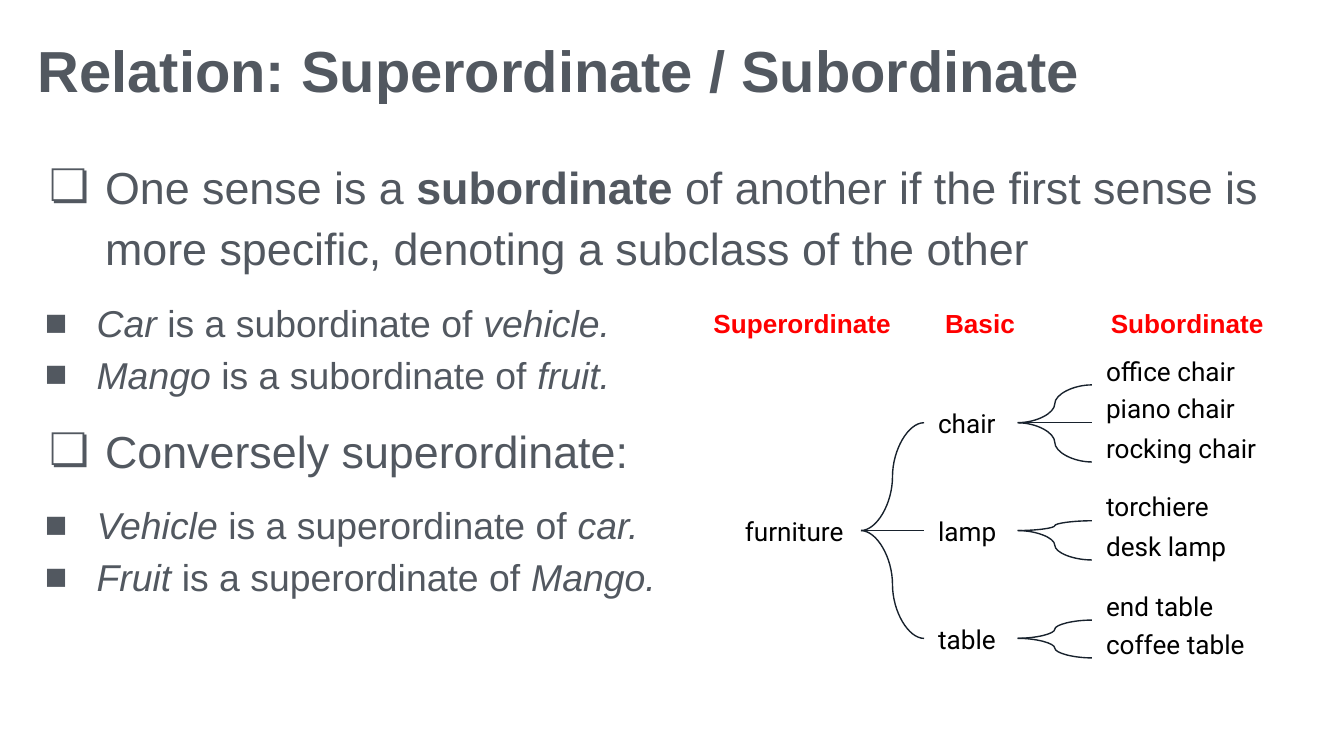
from dataclasses import dataclass
from typing import NamedTuple

from lxml import etree
from pptx import Presentation
from pptx import util as u
from pptx.dml.color import RGBColor
from pptx.enum import shapes, text
from pptx.oxml.ns import qn

EMU_PER_PX = 9525
SLATE, RED, BLACK, INK = "525860", "FF0000", "000000", "18222D"


class Words(NamedTuple):
    text: str
    bold: bool = False
    italic: bool = False


@dataclass
class Point:
    words: list[Words]
    level: int = 0
    before: int = 0


class BulletStyle(NamedTuple):
    char: str
    size: int
    margin: int
    hang: int


@dataclass
class Category:
    label: str
    top: int
    members: dict[str, int]  # label -> top


BULLETS = [BulletStyle("❏", 24, 48, 40), BulletStyle("■", 20, 42, 37)]


def example(first: str, relation: str, last: str, before: int = 0) -> Point:
    return Point([Words(first + " ", italic=True), Words(f"is a {relation} of "),
                  Words(last, italic=True)], 1, before)


POINTS = [
    Point([Words("One sense is a "), Words("subordinate ", bold=True),
           Words("of another if the first sense is more specific, "
                 "denoting a subclass of the other")]),
    example("Car", "subordinate", "vehicle.", 10),
    example("Mango", "subordinate", "fruit."),
    Point([Words("Conversely superordinate:")], before=10),
    example("Vehicle", "superordinate", "car.", 10),
    example("Fruit", "superordinate", "Mango."),
]

HEADINGS = {"Superordinate": 160, "Basic": 94, "Subordinate": 202}

CATEGORIES = [
    Category("chair", 281, {"office chair": 262, "piano chair": 289, "rocking chair": 317}),
    Category("lamp", 358, {"torchiere": 359, "desk lamp": 387}),
    Category("table", 435, {"end table": 430, "coffee table": 457}),
]
ROOT_LEFT, ROOT_TOP, ROOT_WIDTH = 522, 358, 93
BASIC_LEFT, BASIC_WIDTH = 660, 67
MEMBER_LEFT, MEMBER_WIDTH = 780, 134
LABEL_HEIGHT, MEMBER_HEIGHT = 42, 27


def px(length: int) -> u.Emu:
    return u.Emu(length * EMU_PER_PX)


def color(value: str) -> RGBColor:
    return RGBColor.from_string(value)


def style_font(font, name: str, size: int, hue: str, bold=False, italic=False) -> None:
    font.name, font.size, font.bold, font.italic = name, u.Pt(size), bold, italic
    font.color.rgb = color(hue)


def set_insets(holder, inset: int) -> None:
    """Works for both text frames and table cells."""
    holder.margin_left = holder.margin_right = px(inset)
    holder.margin_top = holder.margin_bottom = px(inset)


def add_bullet(paragraph, style: BulletStyle) -> None:
    props = paragraph._p.get_or_add_pPr()
    props.set("marL", str(px(style.margin)))
    props.set("indent", str(-px(style.hang)))
    hue = etree.SubElement(props, qn("a:buClr"))
    etree.SubElement(hue, qn("a:srgbClr"), val=SLATE)
    etree.SubElement(props, qn("a:buFont"), typeface="Arial")
    etree.SubElement(props, qn("a:buChar"), char=style.char)


def set_title(slide, wording: str) -> None:
    title = slide.shapes.title
    title.left, title.top, title.width, title.height = px(21), px(19), px(915), px(47)
    frame = title.text_frame
    frame.text = wording
    frame.word_wrap = True
    frame.auto_size = text.MSO_AUTO_SIZE.NONE
    frame.vertical_anchor = text.MSO_ANCHOR.TOP
    set_insets(frame, 6)
    frame.paragraphs[0].alignment = text.PP_ALIGN.LEFT
    style_font(frame.paragraphs[0].runs[0].font, "Arial", 31, SLATE, bold=True)


def add_points(slide, points: list[Point]) -> None:
    frame = slide.shapes.add_textbox(px(21), px(102), px(948), px(377)).text_frame
    frame.word_wrap = True
    set_insets(frame, 6)
    for index, point in enumerate(points):
        paragraph = frame.add_paragraph() if index else frame.paragraphs[0]
        style = BULLETS[point.level]
        add_bullet(paragraph, style)
        paragraph.level = point.level
        paragraph.line_spacing = 1.15
        paragraph.space_before = u.Pt(point.before)
        for words in point.words:
            run = paragraph.add_run()
            run.text = words.text
            style_font(run.font, "Arial", style.size, SLATE, words.bold, words.italic)


def add_headings(slide, headings: dict[str, int]) -> None:
    table = slide.shapes.add_table(1, len(headings), px(493), px(211),
                                   px(sum(headings.values())), px(41)).table
    table.first_row = table.horz_banding = False
    for index, (heading, width) in enumerate(headings.items()):
        table.columns[index].width = px(width)
        cell = table.cell(0, index)
        cell.fill.background()
        set_insets(cell, 10)
        cell.text = heading
        paragraph = cell.text_frame.paragraphs[0]
        paragraph.alignment = text.PP_ALIGN.CENTER
        style_font(paragraph.runs[0].font, "Arial", 14, RED, bold=True)


def add_label(slide, label: str, left: int, top: int, width: int,
              height: int = LABEL_HEIGHT, spacing: float = 1.0) -> None:
    frame = slide.shapes.add_textbox(px(left), px(top), px(width), px(height)).text_frame
    frame.word_wrap = True
    frame.auto_size = text.MSO_AUTO_SIZE.SHAPE_TO_FIT_TEXT
    set_insets(frame, 10)
    frame.text = label
    paragraph = frame.paragraphs[0]
    paragraph.line_spacing = spacing
    style_font(paragraph.runs[0].font, "Roboto", 14, BLACK)


def add_branch(slide, x1: int, y1: int, x2: int, y2: int) -> None:
    branch = slide.shapes.add_connector(shapes.MSO_CONNECTOR.CURVE,
                                        px(x1), px(y1), px(x2), px(y2))
    branch.line.color.rgb = color(INK)
    branch.line.width = u.Pt(0.75)
    etree.SubElement(branch._element.spPr, qn("a:effectLst"))


def add_tree(slide, root: str, categories: list[Category]) -> None:
    half = LABEL_HEIGHT // 2
    add_label(slide, root, ROOT_LEFT, ROOT_TOP, ROOT_WIDTH)
    for category in categories:
        middle = category.top + half
        add_label(slide, category.label, BASIC_LEFT, category.top, BASIC_WIDTH)
        add_branch(slide, ROOT_LEFT + ROOT_WIDTH, ROOT_TOP + half, BASIC_LEFT, middle)
        for member, top in category.members.items():
            add_label(slide, member, MEMBER_LEFT, top, MEMBER_WIDTH, MEMBER_HEIGHT, 0.35)
            add_branch(slide, BASIC_LEFT + BASIC_WIDTH, middle,
                       MEMBER_LEFT, top + MEMBER_HEIGHT // 2)


def main() -> None:
    deck = Presentation()
    deck.slide_width, deck.slide_height = px(960), px(540)
    slide = deck.slides.add_slide(deck.slide_layouts[5])
    set_title(slide, "Relation: Superordinate / Subordinate")
    add_points(slide, POINTS)
    add_headings(slide, HEADINGS)
    add_tree(slide, "furniture", CATEGORIES)
    deck.save("out.pptx")


if __name__ == "__main__":
    main()
